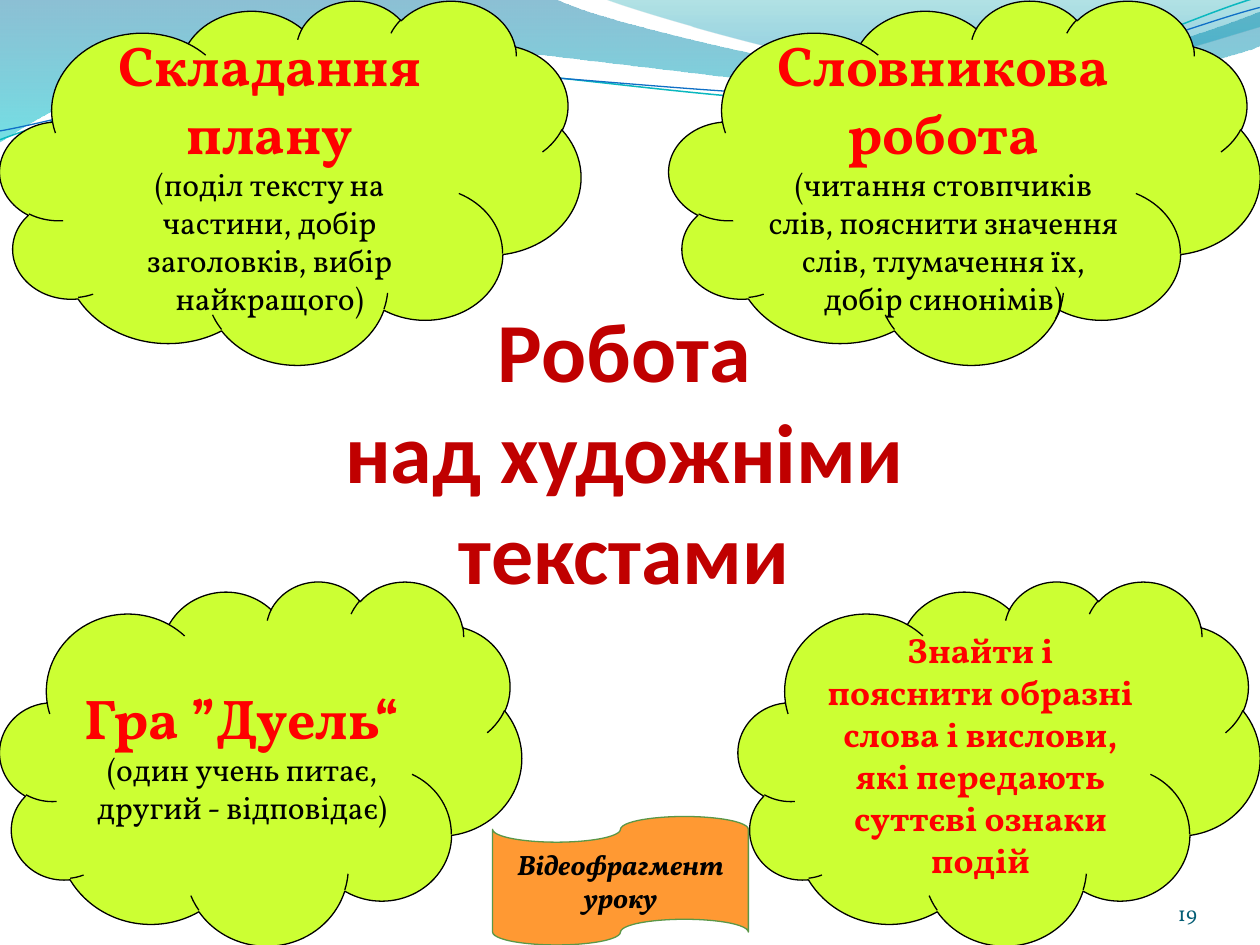
import math
from dataclasses import dataclass
from lxml import etree
from pptx import Presentation, util as u
from pptx.dml.color import RGBColor
from pptx.enum import shapes as kinds, text as t
from pptx.oxml import ns


@dataclass(frozen=True)
class Theme:
    head: str = "Calibri"
    body: str = "Vollkorn"
    title: str = "C00000"
    red: str = "FF0000"
    ink: str = "000000"
    cloud: str = "CCFF33"
    tape: str = "FF9933"
    edge: str = "5B9747"
    page: str = "045D75"
    huge: int = 48
    big: int = 32
    mid: int = 20
    base: int = 18
    note: int = 16
    tiny: int = 12


TH = Theme()
COLS, ROWS = 100, 75
CELL = u.Inches(0.1)
CLOUD_H = 28.9
TILT = 2.7

LEFT_WAVE = [(0, -.1), (44, -.1),
             (47.6, 1.7, 66.4, 6.3, 75.8, 6.3), (85.3, 6.3, 95.8, 2.6, 100, .9),
             (100.1, 3.6), (98.3, 4.4, 87, 7.6, 74.6, 7.5),
             (62.2, 7.5, 38.2, 2.8, 25.7, 3.4), (12.9, 3.5, 4.6, 8.3, -.1, 11.3)]
RIGHT_WAVE = [(47.9, -.1), (50.9, 1.1, 68.2, 6.2, 76.9, 6.5),
              (85.6, 6.9, 96.1, 3.2, 100, 2.1), (100, 0)]
TEAL_LINE = [(0, 11.1), (4.8, 9.3, 15.8, 5.7, 27.7, 5.2),
             (39.5, 4.7, 59.3, 8.9, 71.3, 8), (83.3, 7.1, 93.8, 1.5, 99.8, -.2)]
BLUE_LINE = [(0, 10.4), (4.7, 9.6, 16.4, 6.1, 28.3, 5.6),
             (40.3, 5.1, 59.7, 8.3, 71.7, 7.5), (83.6, 6.7, 94.1, 2.1, 100, .6)]
WAVES = [(LEFT_WAVE, [("0074A1", 45, 0), ("00C6CF", 55, 1)]),
         (RIGHT_WAVE, [("00A1A9", 30, 0), ("008BBF", 45, .8)])]
LINES = [(TEAL_LINE, "0AB8BF", .85), (BLUE_LINE, "0F6FC6", .75)]


def emu(*cells):
    return [int(c * CELL) for c in cells]


def rgb(code):
    return RGBColor.from_string(code)


def turn(steps, angle):
    turned = math.radians(angle)
    sine, cosine = math.sin(turned), math.cos(turned)
    mid_x = (steps[0][0] + steps[-1][-2]) / 2
    mid_y = (steps[0][1] + steps[-1][-1]) / 2
    result = []
    for step in steps:
        spots = []
        for x, y in zip(step[::2], step[1::2]):
            x, y = x - mid_x, y - mid_y
            spots += [mid_x + x * cosine - y * sine,
                      mid_y + x * sine + y * cosine]
        result.append(tuple(spots))
    return result


def outline(slide, box, steps, close):
    dots = [emu(box[0] + x, box[1] + y) for step in steps
            for x, y in zip(step[::2], step[1::2])]
    pen = slide.shapes.build_freeform(*dots[0], scale=1.0)
    pen.add_line_segments(dots[1:], close=close)
    shape = pen.convert_to_shape()
    shape.shadow.inherit = False
    legs = iter(list(shape.element.iter(ns.qn("a:lnTo"))))
    for step in steps[1:]:
        trio = [next(legs) for _ in step[::2]]
        if len(trio) == 3:
            curve = etree.Element(ns.qn("a:cubicBezTo"))
            trio[0].addprevious(curve)
            for leg in trio:
                curve.append(leg[0])
                leg.getparent().remove(leg)
    return shape


def banner(slide, box):
    for steps, stops in WAVES:
        wave = outline(slide, box, steps, True)
        wave.line.fill.background()
        wave.fill.gradient()
        wave.fill.gradient_angle = 270
        for stop, (tone, _, place) in zip(wave.fill.gradient_stops, stops):
            stop.color.rgb = rgb(tone)
            stop.position = place
        tones = wave.element.spPr.iter(ns.qn("a:srgbClr"))
        for node, (_, share, _) in zip(list(tones), stops):
            alpha = etree.SubElement(node, ns.qn("a:alpha"))
            alpha.set("val", str(share * 1000))
    for steps, tone, width in LINES:
        line = outline(slide, box, turn(steps, TILT), False)
        line.rotation = 360 - TILT
        line.fill.background()
        line.line.color.rgb = rgb(tone)
        line.line.width = u.Pt(width)


def write(frame, rows, align=t.PP_ALIGN.CENTER, anchor=t.MSO_ANCHOR.MIDDLE):
    frame.word_wrap = True
    frame.auto_size = t.MSO_AUTO_SIZE.NONE
    frame.vertical_anchor = anchor
    for i, (words, size, tone, bold, face, slant) in enumerate(rows):
        para = frame.add_paragraph() if i else frame.paragraphs[0]
        para.text = words
        para.alignment = align
        for run in para.runs:
            font = run.font
            font.name, font.size = face, u.Pt(size)
            font.bold, font.italic = bold, slant
            font.color.rgb = rgb(tone)


def row(words, size, tone, bold=False, face=TH.body, slant=False):
    return words, size, tone, bold, face, slant


def badge(slide, box, kind, fill, edge, rows):
    shape = slide.shapes.add_shape(kind, *emu(*box))
    shape.shadow.inherit = False
    shape.fill.solid()
    shape.fill.fore_color.rgb = rgb(fill)
    shape.line.color.rgb = rgb(edge)
    shape.line.width = u.Pt(.75)
    write(shape.text_frame, rows)


def cloud(slide, box, head, size, note=None):
    rows = [row(head, size, TH.red, True)]
    if note:
        rows.append(row(note, TH.base, TH.ink))
    badge(slide, box, kinds.MSO_SHAPE.CLOUD, TH.cloud, TH.ink, rows)


def tape(slide, box, words):
    badge(slide, box, kinds.MSO_SHAPE.FLOWCHART_PUNCHED_TAPE, TH.tape, TH.edge,
          [row(words, TH.note, TH.ink, True, slant=True)])


def bare(frame, top=0):
    frame.margin_left = frame.margin_right = frame.margin_bottom = 0
    frame.margin_top = top


def title(slide, box, words):
    head = slide.shapes.title
    head.left, head.top, head.width, head.height = emu(*box)
    bare(head.text_frame, u.Inches(.05))
    write(head.text_frame, [row(words, TH.huge, TH.title, True, TH.head)],
          anchor=t.MSO_ANCHOR.BOTTOM)


def number(slide, box, words):
    frame = slide.shapes.add_textbox(*emu(*box)).text_frame
    bare(frame)
    write(frame, [row(words, TH.tiny, TH.page)],
          t.PP_ALIGN.RIGHT, t.MSO_ANCHOR.BOTTOM)


def corner(wide, right=False, low=False):
    return (COLS - wide if right else 0, ROWS - CLOUD_H if low else 0,
            wide, CLOUD_H)


def main():
    deck = Presentation()
    deck.slide_width, deck.slide_height = emu(COLS, ROWS)
    slide = deck.slides.add_slide(deck.slide_layouts[5])
    banner(slide, (0, 0))
    number(slide, (86.7, 69.5, 8.3, 4), "19")
    title(slide, (27.3, 22.7, 44.5, 25), "Робота\nнад художніми\nтекстами")
    cloud(slide, corner(46.1), "Складання плану", TH.big,
          "(поділ тексту на частини, добір заголовків, вибір найкращого)")
    cloud(slide, corner(41.4, True, True),
          "Знайти і пояснити образні слова і вислови, "
          "які передають суттєві ознаки подій", TH.mid)
    cloud(slide, corner(41.4, low=True), "Гра ”Дуель“", TH.big,
          "(один учень питає, другий - відповідає)")
    cloud(slide, corner(46.9, True), "Словникова робота", TH.big,
          "(читання стовпчиків слів, пояснити значення слів, "
          "тлумачення їх, добір синонімів)")
    tape(slide, (39.1, 64.8, 20.3, 10.2), "Відеофрагмент уроку")
    deck.save("out.pptx")


if __name__ == "__main__":
    main()
